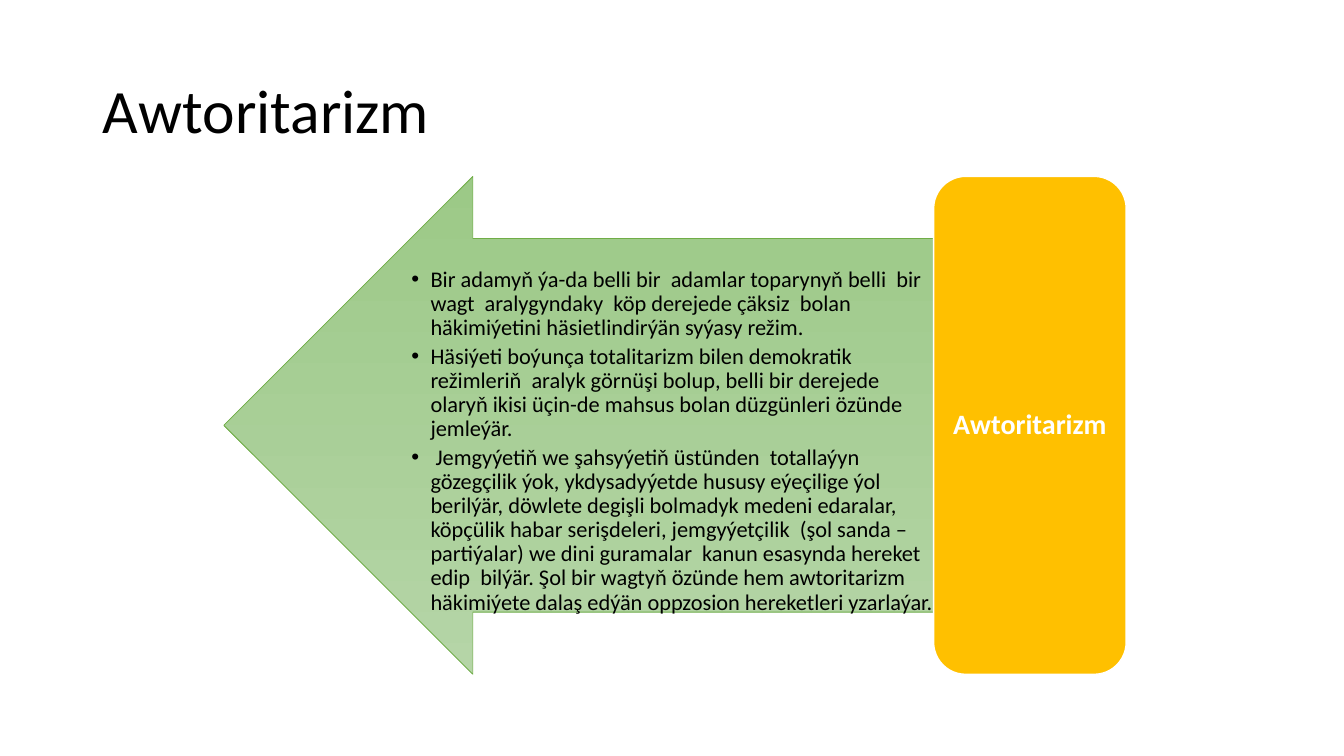
from dataclasses import dataclass

from pptx import Presentation
from pptx.dml.color import RGBColor
from pptx.enum.shapes import MSO_SHAPE
from pptx.enum.text import MSO_ANCHOR, MSO_AUTO_SIZE, PP_ALIGN
from pptx.util import Inches, Pt

BLACK = RGBColor(0x00, 0x00, 0x00)
WHITE = RGBColor(0xFF, 0xFF, 0xFF)
AMBER = RGBColor(0xFF, 0xC0, 0x00)
GREEN = RGBColor(0x70, 0xAD, 0x47)
GREEN_TOP = RGBColor(0x9C, 0xC9, 0x87)
GREEN_BOTTOM = RGBColor(0xB5, 0xD5, 0xA7)

TOPIC = "Awtoritarizm"
FEATURES = [
    "Bir adamyň ýa-da belli bir  adamlar toparynyň belli  bir  wagt  aralygyndaky  "
    "köp derejede çäksiz  bolan  häkimiýetini häsietlindirýän syýasy režim.",
    "Häsiýeti boýunça totalitarizm bilen demokratik režimleriň  aralyk görnüşi bolup, "
    "belli bir derejede olaryň ikisi üçin-de mahsus bolan düzgünleri özünde jemleýär.",
    " Jemgyýetiň we şahsyýetiň üstünden  totallaýyn gözegçilik ýok, ykdysadyýetde "
    "hususy eýeçilige ýol berilýär, döwlete degişli bolmadyk medeni edaralar, köpçülik "
    "habar serişdeleri, jemgyýetçilik  (şol sanda – partiýalar) we dini guramalar  kanun "
    "esasynda hereket edip  bilýär. Şol bir wagtyň özünde hem awtoritarizm häkimiýete "
    "dalaş edýän oppzosion hereketleri yzarlaýar.",
]


@dataclass(frozen=True)
class Box:
    left: float
    top: float
    width: float
    height: float

    def lengths(self) -> tuple:
        return tuple(map(Inches, (self.left, self.top, self.width, self.height)))


@dataclass(frozen=True)
class TextStyle:
    size: int
    color: RGBColor
    align: PP_ALIGN
    anchor: MSO_ANCHOR
    margins: tuple[float, float]
    bold: bool = False
    space_after: int = 0


TITLE_STYLE = TextStyle(44, BLACK, PP_ALIGN.LEFT, MSO_ANCHOR.MIDDLE, (0.1, 0.05))
LIST_STYLE = TextStyle(16, BLACK, PP_ALIGN.LEFT, MSO_ANCHOR.TOP, (0.01, 0.01), space_after=3)
LABEL_STYLE = TextStyle(20, WHITE, PP_ALIGN.CENTER, MSO_ANCHOR.MIDDLE, (0.08, 0.04), bold=True)


def place(shape, box: Box) -> None:
    shape.left, shape.top, shape.width, shape.height = box.lengths()


def write(shape, text: str, style: TextStyle) -> None:
    frame = shape.text_frame
    frame.text = text
    frame.word_wrap = True
    frame.auto_size = MSO_AUTO_SIZE.NONE
    frame.vertical_anchor = style.anchor
    across, down = map(Inches, style.margins)
    frame.margin_left = frame.margin_right = across
    frame.margin_top = frame.margin_bottom = down
    for paragraph in frame.paragraphs:
        paragraph.alignment = style.align
        paragraph.line_spacing = 0.9
        paragraph.space_before = Pt(0)
        paragraph.space_after = Pt(style.space_after)
        for run in paragraph.runs:
            run.font.name = "Calibri"
            run.font.size = Pt(style.size)
            run.font.bold = style.bold
            run.font.color.rgb = style.color


def add_outlined(slide, kind: MSO_SHAPE, box: Box, line: RGBColor, weight: float):
    shape = slide.shapes.add_shape(kind, *box.lengths())
    shape.shadow.inherit = False
    shape.line.color.rgb = line
    shape.line.width = Pt(weight)
    return shape


def main() -> None:
    prs = Presentation()
    prs.slide_width, prs.slide_height = Inches(13.33), Inches(7.5)
    slide = prs.slides.add_slide(prs.slide_layouts[1])
    title, features = slide.placeholders

    # Title
    place(title, Box(0.92, 0.4, 11.5, 1.45))
    write(title, TOPIC, TITLE_STYLE)

    # Feature list
    place(features, Box(4.07, 2.65, 5.23, 3.43))
    write(features, "\n".join(FEATURES), LIST_STYLE)
    for paragraph in features.text_frame.paragraphs:
        properties = paragraph._p.get_or_add_pPr()
        properties.set("marL", str(Inches(0.19)))
        properties.set("indent", str(Inches(-0.19)))

    # Arrow behind the list
    arrow = add_outlined(slide, MSO_SHAPE.LEFT_ARROW, Box(2.22, 1.75, 7.08, 4.94), GREEN, 0.5)
    arrow.adjustments[0], arrow.adjustments[1] = 0.75, 0.5
    arrow.fill.gradient()
    arrow.fill.gradient_angle = 270
    for stop, color, position in zip(
        arrow.fill.gradient_stops, (GREEN_TOP, GREEN_BOTTOM), (0, 1)
    ):
        stop.color.rgb = color
        stop.position = position
    title._element.addprevious(arrow._element)

    # Topic label
    label = add_outlined(slide, MSO_SHAPE.ROUNDED_RECTANGLE, Box(9.26, 1.75, 1.91, 4.94), WHITE, 1)
    label.fill.solid()
    label.fill.fore_color.rgb = AMBER
    write(label, TOPIC, LABEL_STYLE)

    prs.save("out.pptx")


if __name__ == "__main__":
    main()
